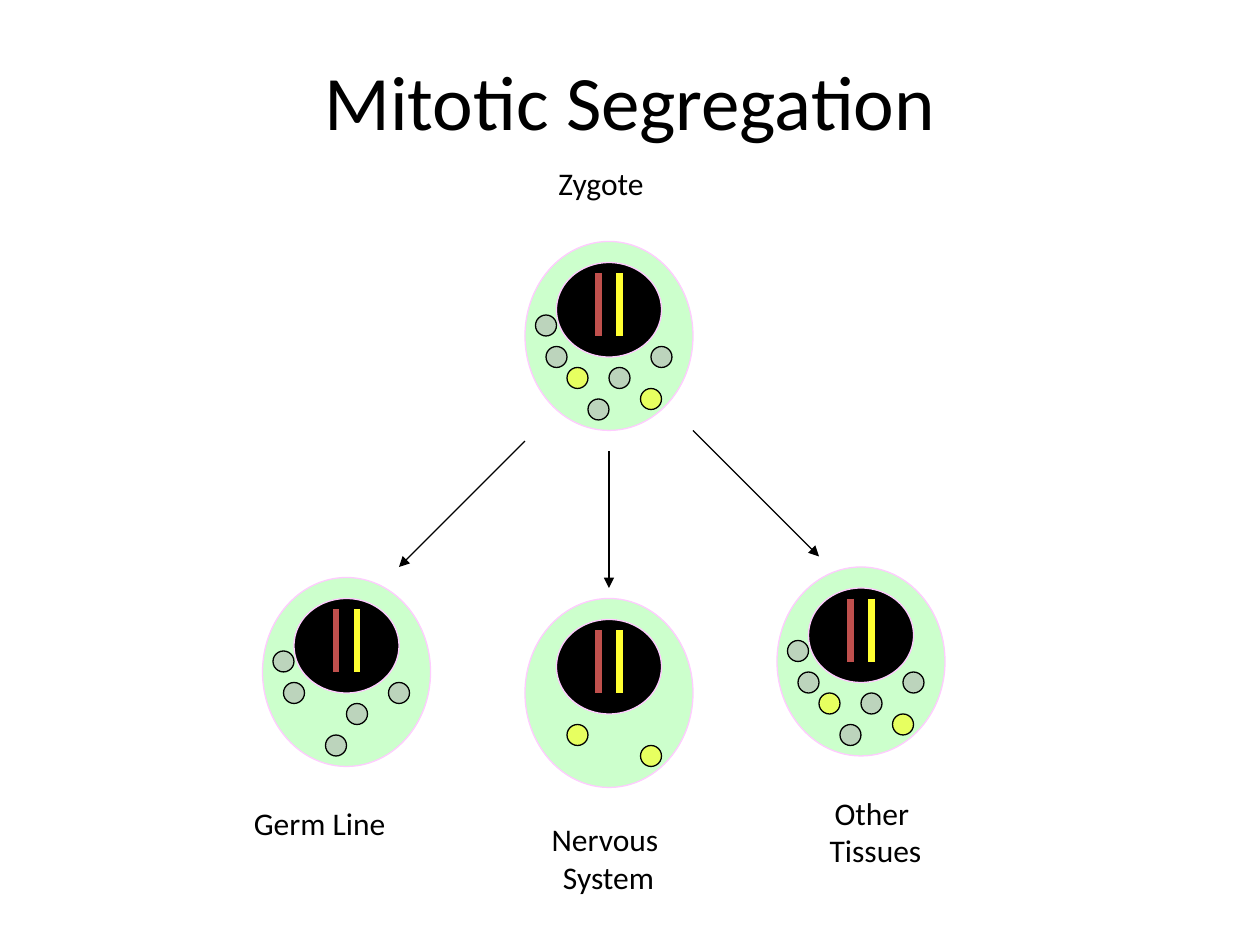
from dataclasses import dataclass

from lxml.etree import SubElement
from pptx import Presentation
from pptx.dml.color import RGBColor
from pptx.enum.shapes import MSO_CONNECTOR, MSO_SHAPE
from pptx.enum.text import MSO_ANCHOR, MSO_AUTO_SIZE, PP_ALIGN
from pptx.oxml.ns import qn
from pptx.util import Pt


@dataclass(frozen=True)
class Theme:
    font: str = "Calibri"
    title: int = 44
    label: int = 18
    ink: str = "000000"
    cell: str = "CCFFCC"
    membrane: str = "FFCCFF"
    maternal: str = "FFFF31"
    paternal: str = "C0504D"
    normal: str = "AEAEAE"
    mutant: str = "FFFF00"


theme = Theme()


def write(tf, text, size=theme.label, align=PP_ALIGN.LEFT, anchor=MSO_ANCHOR.TOP, wrap=False):
    tf.word_wrap = wrap
    tf.vertical_anchor = anchor
    for i, row in enumerate(text.split("\n")):
        p = tf.paragraphs[0] if i == 0 else tf.add_paragraph()
        p.alignment = align
        r = p.add_run()
        r.text = row
        r.font.name = theme.font
        r.font.size = Pt(size)
        r.font.color.rgb = RGBColor.from_string(theme.ink)


def draw(kind, x1, y1, x2, y2, line, width=0.75, fill=None, alpha=None):
    if kind == "ellipse":
        sp = s.shapes.add_shape(MSO_SHAPE.OVAL, Pt(x1), Pt(y1), Pt(x2 - x1), Pt(y2 - y1))
        sp.shadow.inherit = False
        sp.fill.solid()
        sp.fill.fore_color.rgb = RGBColor.from_string(fill)
        if alpha:
            color = sp.fill._xPr.find(qn("a:solidFill"))[0]
            SubElement(color, qn("a:alpha"), val=str(alpha * 1000))
    else:
        sp = s.shapes.add_connector(MSO_CONNECTOR.STRAIGHT, Pt(x1), Pt(y1), Pt(x2), Pt(y2))
    sp.line.color.rgb = RGBColor.from_string(line)
    sp.line.width = Pt(width)
    if kind == "arrow":
        SubElement(sp.line._get_or_add_ln(), qn("a:tailEnd"), type="triangle")
    if kind != "ellipse":
        SubElement(sp._element.spPr, qn("a:effectLst"))
    return sp


prs = Presentation()
prs.slide_width, prs.slide_height = Pt(720), Pt(540)
s = prs.slides.add_slide(prs.slide_layouts[5])

title = s.shapes.title
title.left, title.top, title.width, title.height = Pt(36), Pt(12), Pt(648), Pt(90)
write(title.text_frame, "Mitotic Segregation", size=theme.title,
      align=PP_ALIGN.CENTER, anchor=MSO_ANCHOR.MIDDLE, wrap=True)

normal = [(6, 42), (36, 90), (72, 60), (48, 72), (12, 60)]
mutant = [(66, 84), (24, 72)]
cells = [
    (300, 138, normal, mutant),
    (150, 330, normal, []),
    (300, 342, [], mutant),
    (444, 324, normal, mutant),
]
for x, y, grey, yellow in cells:
    draw("ellipse", x, y, x + 96, y + 108, theme.membrane, fill=theme.cell)
    nucleus = draw("ellipse", x + 21, y + 9, x + 75, y + 69, theme.membrane, fill=theme.ink)
    nucleus.rotation = 90
    for dx, color in [(54, theme.maternal), (42, theme.paternal)]:
        draw("line", x + dx, y + 18, x + dx, y + 54, color, width=3.5)
    for spots, color in [(grey, theme.normal), (yellow, theme.mutant)]:
        for dx, dy in spots:
            draw("ellipse", x + dx, y + dy, x + dx + 12, y + dy + 12,
                 theme.ink, fill=color, alpha=53)

for ends in [(348, 258, 348, 336), (300, 252, 228, 324), (396, 246, 468, 318)]:
    draw("arrow", *ends, theme.ink)

labels = [
    ("Germ Line", 138, 456, 98.5, 29, PP_ALIGN.LEFT),
    ("Nervous \nSystem", 304.5, 465, 86.5, 50.5, PP_ALIGN.CENTER),
    ("Other \nTissues", 462, 450, 76.5, 50.5, PP_ALIGN.CENTER),
    ("Zygote", 312, 90, 70, 29, PP_ALIGN.LEFT),
]
for text, x, y, w, h, align in labels:
    tb = s.shapes.add_textbox(Pt(x), Pt(y), Pt(w), Pt(h))
    write(tb.text_frame, text, align=align)
    tb.text_frame.auto_size = MSO_AUTO_SIZE.SHAPE_TO_FIT_TEXT

prs.save("out.pptx")
